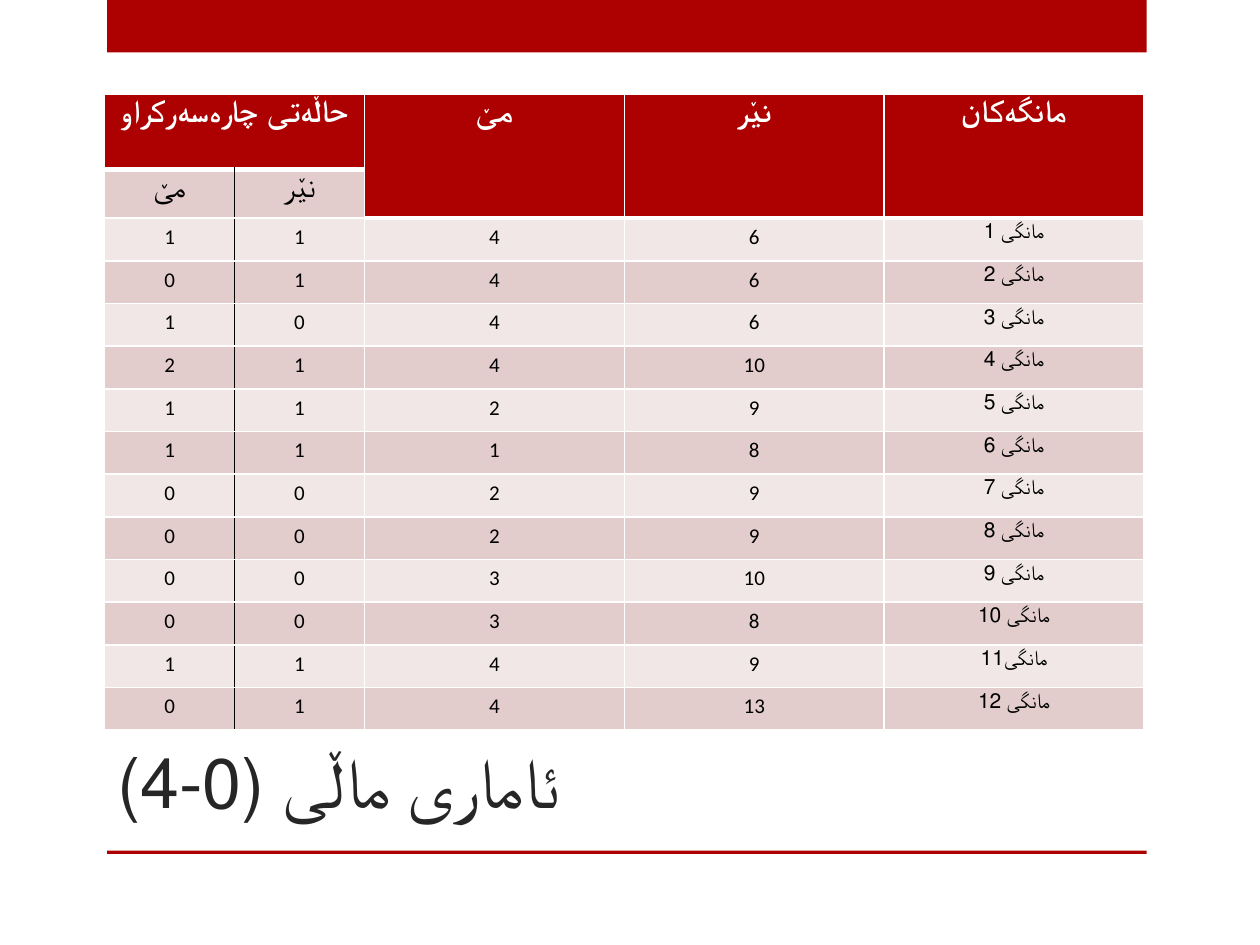
"""Build a slide with a monthly table of household statistics."""
import pptx
import pptx.dml.color
import pptx.enum.shapes
import pptx.enum.text
import pptx.oxml
import pptx.oxml.ns
import pptx.util

Pt = pptx.util.Pt
CENTER = pptx.enum.text.PP_ALIGN.CENTER
COLORS = {
    "red": "AD0101", "white": "FFFFFF", "black": "000000",
    "title": "262626", "dark_band": "E3CCCC", "light_band": "F1E7E7",
}
HEADER_FONT = {"name": "Times New Roman", "size": Pt(18), "bold": True}
SUBHEADER_FONT = {**HEADER_FONT, "bold": False}
BODY_FONT = {"name": "Calibri", "size": Pt(12), "bold": False}
TITLE_FONT = {"name": "Calibri", "size": Pt(40), "bold": False}
ARABIC_SPACING = 0.85
COLUMN_WIDTHS = [74.25, 74.25, 148.5, 148.5, 148.5]
ROW_HEIGHTS = [43, 27.7] + [24.4] * 12
HEADERS = [
    ["حاڵەتی چارەسەركراو", "", "مێ", "نێر", "مانگەكان"],
    ["مێ", "نێر", "", "", ""],
]
MONTHS = [
    [1, 1, 4, 6, "مانگی 1"],
    [0, 1, 4, 6, "مانگی 2"],
    [1, 0, 4, 6, "مانگی 3"],
    [2, 1, 4, 10, "مانگی 4"],
    [1, 1, 2, 9, "مانگی 5"],
    [1, 1, 1, 8, "مانگی 6"],
    [0, 0, 2, 9, "مانگی 7"],
    [0, 0, 2, 9, "مانگی 8"],
    [0, 0, 3, 10, "مانگی 9"],
    [0, 0, 3, 8, "مانگی 10"],
    [1, 1, 4, 9, "مانگی11"],
    [0, 1, 4, 13, "مانگی 12"],
]


def rgb(name):
    return pptx.dml.color.RGBColor.from_string(COLORS[name])


def format_paragraph(paragraph, font_values, color, alignment, line_spacing=1.0):
    paragraph.alignment = alignment
    paragraph.line_spacing = line_spacing
    for run in paragraph.runs:
        for name, value in font_values.items():
            setattr(run.font, name, value)
        run.font.color.rgb = rgb(color)


def add_bar(slide, top, height):
    bar = slide.shapes.add_shape(
        pptx.enum.shapes.MSO_SHAPE.RECTANGLE, Pt(61.2), Pt(top), Pt(594), Pt(height))
    bar.shadow.inherit = False
    bar.fill.solid()
    bar.fill.fore_color.rgb = rgb("red")
    bar.line.fill.background()


def set_title(slide, text):
    title = slide.shapes.title
    box = {"left": Pt(59.8), "top": Pt(401.8), "width": Pt(534.2), "height": Pt(72)}
    for name, value in box.items():
        setattr(title, name, value)
    frame = title.text_frame
    frame.text = text
    frame.word_wrap = True
    frame.auto_size = pptx.enum.text.MSO_AUTO_SIZE.NONE
    frame.vertical_anchor = pptx.enum.text.MSO_ANCHOR.BOTTOM
    format_paragraph(frame.paragraphs[0], TITLE_FONT, "title",
                     pptx.enum.text.PP_ALIGN.LEFT)


def set_borders(cell, row, column):
    header_end = 0 if column < 2 else 1
    borders = {side: ("white", 1) for side in "LRTB"}
    if row <= header_end:
        borders["B"] = ("white", 3)
    elif row == header_end + 1:
        borders["T"] = ("white", 3)
    if row > 0 and column < 2:
        borders["R" if column == 0 else "L"] = ("black", 1)
    properties = cell._tc.get_or_add_tcPr()
    for index, (side, (color, width)) in enumerate(borders.items()):
        properties.insert(index, pptx.oxml.parse_xml(
            f'<a:ln{side} {pptx.oxml.ns.nsdecls("a")} w="{Pt(width)}">'
            f'<a:solidFill><a:srgbClr val="{COLORS[color]}"/></a:solidFill>'
            f'</a:ln{side}>'))


def fill_cell(cell, value, row, column):
    is_header = row == 0 or (row == 1 and column >= 2)
    band = "dark_band" if row % 2 else "light_band"
    cell.fill.solid()
    cell.fill.fore_color.rgb = rgb("red" if is_header else band)
    set_borders(cell, row, column)
    cell.text = str(value)
    font_values = HEADER_FONT if is_header else SUBHEADER_FONT if row == 1 else BODY_FONT
    format_paragraph(cell.text_frame.paragraphs[0], font_values,
                     "white" if is_header else "black", CENTER,
                     ARABIC_SPACING if isinstance(value, str) else 1.0)


def add_month_table(slide):
    rows = HEADERS + MONTHS
    table = slide.shapes.add_table(
        len(rows), len(COLUMN_WIDTHS), Pt(59.8), Pt(54),
        Pt(sum(COLUMN_WIDTHS)), Pt(sum(ROW_HEIGHTS))).table
    table.horz_banding = False
    for column, width in zip(table.columns, COLUMN_WIDTHS):
        column.width = Pt(width)
    for row, height in zip(table.rows, ROW_HEIGHTS):
        row.height = Pt(height)
    table.cell(0, 0).merge(table.cell(0, 1))
    for column in range(2, 5):
        table.cell(0, column).merge(table.cell(1, column))
    for row, values in enumerate(rows):
        for column, value in enumerate(values):
            cell = table.cell(row, column)
            if not cell.is_spanned:
                fill_cell(cell, value, row, column)


def main():
    presentation = pptx.Presentation()
    presentation.slide_width = Pt(720)
    presentation.slide_height = Pt(540)
    slide = presentation.slides.add_slide(presentation.slide_layouts[5])
    add_bar(slide, 0, 30)
    add_bar(slide, 486, 2)
    set_title(slide, "ئاماری ماڵی (0-4)")
    add_month_table(slide)
    presentation.save("out.pptx")


if __name__ == "__main__":
    main()
